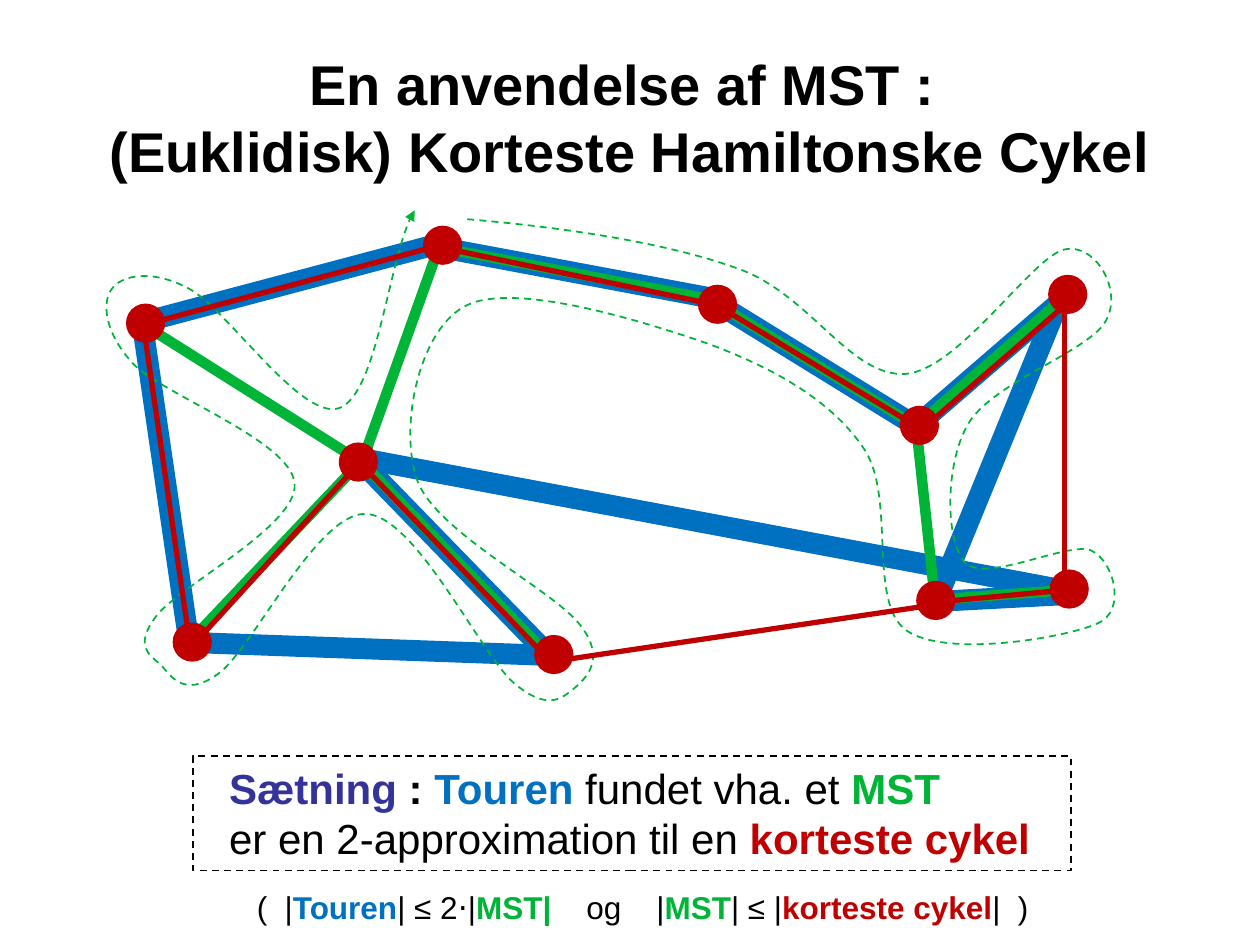
from dataclasses import dataclass

from lxml import etree
from pptx import Presentation
from pptx.dml.color import RGBColor
from pptx.enum.dml import MSO_LINE
from pptx.enum.shapes import MSO_CONNECTOR, MSO_SHAPE
from pptx.enum.text import MSO_ANCHOR, MSO_AUTO_SIZE, PP_ALIGN
from pptx.oxml.ns import qn
from pptx.util import Cm, Pt

STRAIGHT = MSO_CONNECTOR.STRAIGHT
OVAL, RECTANGLE = MSO_SHAPE.OVAL, MSO_SHAPE.RECTANGLE
DASH = MSO_LINE.DASH
TOP, MIDDLE = MSO_ANCHOR.TOP, MSO_ANCHOR.MIDDLE
LEFT, CENTER = PP_ALIGN.LEFT, PP_ALIGN.CENTER
GROW = MSO_AUTO_SIZE.SHAPE_TO_FIT_TEXT

FONT = "Arial"
COLORS = {"black": "000000", "tour": "0070C0", "mst": "00B438",
          "cycle": "C00000", "theorem": "333399"}
NODE_SIZE = 0.79
TEXT_INDENT = 0.48


@dataclass
class Network:
    """Edges of one colour, each as (x1, y1, x2, y2) in cm."""
    color: str
    width: float
    edges: list


@dataclass
class Span:
    text: str
    color: str = "black"
    bold: bool = False
    gap: float = 0  # extra points after each character


TOUR = Network("tour", 12, [
    (7.32, 9.25, 21.41, 11.89), (3.81, 12.95, 11.02, 13.21),
    (11.07, 13.21, 7.29, 9.32), (3.81, 12.95, 2.87, 6.53),
    (14.4, 6.02, 8.94, 5), (18.47, 8.59, 14.35, 6.05),
    (21.41, 5.92, 18.87, 12.12), (21.56, 5.92, 18.47, 8.59),
    (21.41, 11.99, 18.95, 12.12), (8.79, 4.93, 2.87, 6.5)])
MST = Network("mst", 6, [
    (3.81, 12.95, 7.32, 9.25), (11.05, 13.21, 7.29, 9.32),
    (7.32, 9.25, 8.86, 4.95), (7.29, 9.32, 2.87, 6.53),
    (14.4, 6.05, 8.92, 5), (18.47, 8.59, 14.33, 6.05),
    (18.47, 8.59, 18.85, 12.12), (21.54, 5.92, 18.47, 8.59),
    (21.54, 11.89, 18.85, 12.09)])
CYCLE = Network("cycle", 3, [
    (11.1, 13.34, 18.85, 12.19), (3.84, 13.06, 7.21, 9.37),
    (11.1, 13.34, 7.34, 9.42), (3.84, 13.06, 2.9, 6.63),
    (14.45, 6.15, 8.94, 5), (18.47, 8.59, 14.48, 6.17),
    (21.46, 6.05, 21.46, 12.01), (21.59, 6.05, 18.52, 8.71),
    (21.54, 11.89, 18.85, 12.14), (2.9, 6.55, 8.92, 4.93)])

# Top left corner of each node
NODES = [(2.54, 6.12), (18.47, 11.71), (6.83, 8.92), (18.14, 8.18), (10.77, 12.8),
         (3.48, 12.55), (8.53, 4.55), (21.16, 11.48), (14.07, 5.74), (21.13, 5.54)]

# Walk around the tree: a start, then two control points and an end per curve
WALK_BOX = (2.16, 4.24, 20.32, 9.88)
WALK_START = (9.42, 4.42)
WALK_CURVES = [
    ((11.23, 4.57), (13.41, 4.88), (14.86, 5.41)),
    ((16.33, 5.92), (17.12, 7.59), (18.24, 7.54)),
    ((19.33, 7.47), (20.8, 5.18), (21.46, 5.03)),
    ((22.12, 4.88), (22.73, 5.99), (22.2, 6.6)),
    ((21.67, 7.19), (19.96, 7.77), (19.51, 8.56)),
    ((19.05, 9.35), (19.05, 10.92), (19.46, 11.35)),
    ((19.89, 11.76), (21.56, 10.9), (22, 11.1)),
    ((22.45, 11.3), (22.73, 12.32), (22.12, 12.57)),
    ((21.51, 12.85), (19.05, 13.28), (18.26, 12.7)),
    ((17.48, 12.12), (18.08, 9.98), (17.4, 9.02)),
    ((16.74, 8.05), (15.54, 7.39), (14.22, 6.91)),
    ((12.88, 6.45), (10.39, 5.69), (9.42, 6.15)),
    ((8.46, 6.6), (8.03, 8.59), (8.41, 9.68)),
    ((8.79, 10.74), (11.2, 11.91), (11.71, 12.62)),
    ((12.24, 13.31), (11.79, 13.69), (11.56, 13.89)),
    ((11.33, 14.07), (11.05, 14.35), (10.36, 13.77)),
    ((9.68, 13.18), (8.38, 10.39), (7.37, 10.36)),
    ((6.38, 10.34), (5.08, 13.11), (4.39, 13.59)),
    ((3.68, 14.1), (3.43, 13.59), (3.23, 13.39)),
    ((3.02, 13.21), (2.69, 13.03), (3.15, 12.42)),
    ((3.61, 11.81), (6.02, 10.59), (5.94, 9.75)),
    ((5.87, 8.89), (3.33, 7.98), (2.69, 7.34)),
    ((2.08, 6.68), (2.06, 6.07), (2.26, 5.82)),
    ((2.44, 5.56), (3.05, 5.41), (3.81, 5.82)),
    ((4.57, 6.22), (6.07, 8.48), (6.83, 8.23)),
    ((7.59, 7.98), (7.85, 5.05), (8.36, 4.24))]


def rgb(color: str) -> RGBColor:
    return RGBColor.from_string(COLORS[color])


def draw_network(slide, network: Network) -> None:
    group = slide.shapes.add_group_shape()
    for edge in network.edges:
        line = group.shapes.add_connector(STRAIGHT, *map(Cm, edge))
        line.line.color.rgb = rgb(network.color)
        line.line.width = Pt(network.width)
        etree.SubElement(line._element.spPr, qn("a:effectLst"))


def draw_nodes(slide) -> None:
    group = slide.shapes.add_group_shape()
    for left, top in NODES:
        node = group.shapes.add_shape(OVAL, Cm(left), Cm(top), Cm(NODE_SIZE), Cm(NODE_SIZE))
        node.shadow.inherit = False
        node.fill.solid()
        node.fill.fore_color.rgb = rgb("cycle")
        node.line.fill.background()


def draw_walk(slide) -> None:
    builder = slide.shapes.build_freeform(*map(Cm, WALK_START))
    builder.add_line_segments([tuple(map(Cm, curve[-1])) for curve in WALK_CURVES], close=False)
    walk = builder.convert_to_shape()
    left, top, width, height = map(Cm, WALK_BOX)
    walk.left, walk.top, walk.width, walk.height = left, top, width, height
    walk.shadow.inherit = False
    walk.fill.background()
    walk.line.color.rgb = rgb("mst")
    walk.line.width = Pt(1)
    walk.line.dash_style = DASH
    etree.SubElement(walk.line._get_or_add_ln(), qn("a:tailEnd"), type="triangle")

    # Turn the straight segments into Bézier curves
    outline = walk._element.find(".//" + qn("a:path"))
    for part in list(outline):
        outline.remove(part)
    outline.set("w", str(width))
    outline.set("h", str(height))
    segments = [("a:moveTo", [WALK_START])] + [("a:cubicBezTo", c) for c in WALK_CURVES]
    for tag, points in segments:
        segment = etree.SubElement(outline, qn(tag))
        for x, y in points:
            etree.SubElement(segment, qn("a:pt"), x=str(Cm(x) - left), y=str(Cm(y) - top))


def write_text(shape, lines: list, *, size: float, align=LEFT, anchor=TOP,
               indent: float = 0, grow: bool = False) -> None:
    """Write lines of spans as one paragraph each; a \\v in a span breaks the line."""
    frame = shape.text_frame
    frame.word_wrap = True
    frame.vertical_anchor = anchor
    if grow:
        frame.auto_size = GROW
    for number, spans in enumerate(lines):
        paragraph = frame.add_paragraph() if number else frame.paragraphs[0]
        paragraph.alignment = align
        if indent:
            paragraph._p.get_or_add_pPr().set("marL", str(Cm(indent)))
        for span in spans:
            for index, piece in enumerate(span.text.split("\v")):
                if index:
                    paragraph.add_line_break()
                run = paragraph.add_run()
                run.text = piece
                run.font.name = FONT
                run.font.size = Pt(size)
                run.font.bold = span.bold
                run.font.color.rgb = rgb(span.color)
                if span.gap:
                    run._r.get_or_add_rPr().set("spc", str(round(span.gap * 100)))


def main() -> None:
    deck = Presentation()
    deck.slide_width, deck.slide_height = Cm(25.4), Cm(19.05)
    slide = deck.slides.add_slide(deck.slide_layouts[6])

    draw_network(slide, TOUR)

    title = slide.shapes.add_textbox(Cm(1.27), Cm(0.76), Cm(22.86), Cm(3.18))
    write_text(title, [[Span("En anvendelse af MST : \v(Euklidisk) Korteste Hamiltonske Cykel",
                             bold=True)]], size=32, align=CENTER, anchor=MIDDLE)

    # Graph
    draw_network(slide, MST)
    draw_walk(slide)
    draw_nodes(slide)
    draw_network(slide, CYCLE)

    # Theorem
    theorem = slide.shapes.add_shape(RECTANGLE, Cm(3.89), Cm(15.24), Cm(17.7), Cm(2.31))
    theorem.shadow.inherit = False
    theorem.fill.background()
    theorem.line.color.rgb = rgb("black")
    theorem.line.width = Pt(1)
    theorem.line.dash_style = DASH
    write_text(theorem, [
        [Span("Sætning", "theorem", True), Span(" : ", bold=True), Span("Touren", "tour", True),
         Span(" fundet vha. et "), Span("MST", "mst", True)],
        [Span("er en 2-approximation til en "), Span("korteste cykel", "cycle", True)],
    ], size=24, indent=TEXT_INDENT, grow=True)

    # Bounds behind the theorem
    bounds = slide.shapes.add_textbox(Cm(3.84), Cm(17.78), Cm(17.75), Cm(1.02))
    narrow, wide = Span(" ", gap=5), Span(" ", gap=15)
    write_text(bounds, [[
        Span("("), narrow, Span("|"), Span("Touren", "tour", True), Span("| ≤ 2⋅|"),
        Span("MST|", "mst", True), wide, Span("og"), wide, Span("|"),
        Span("MST", "mst", True), Span("| ≤ |"), Span("korteste cykel", "cycle", True),
        Span("|"), narrow, Span(")"),
    ]], size=18, align=CENTER, indent=TEXT_INDENT, grow=True)

    deck.save("out.pptx")


if __name__ == "__main__":
    main()
